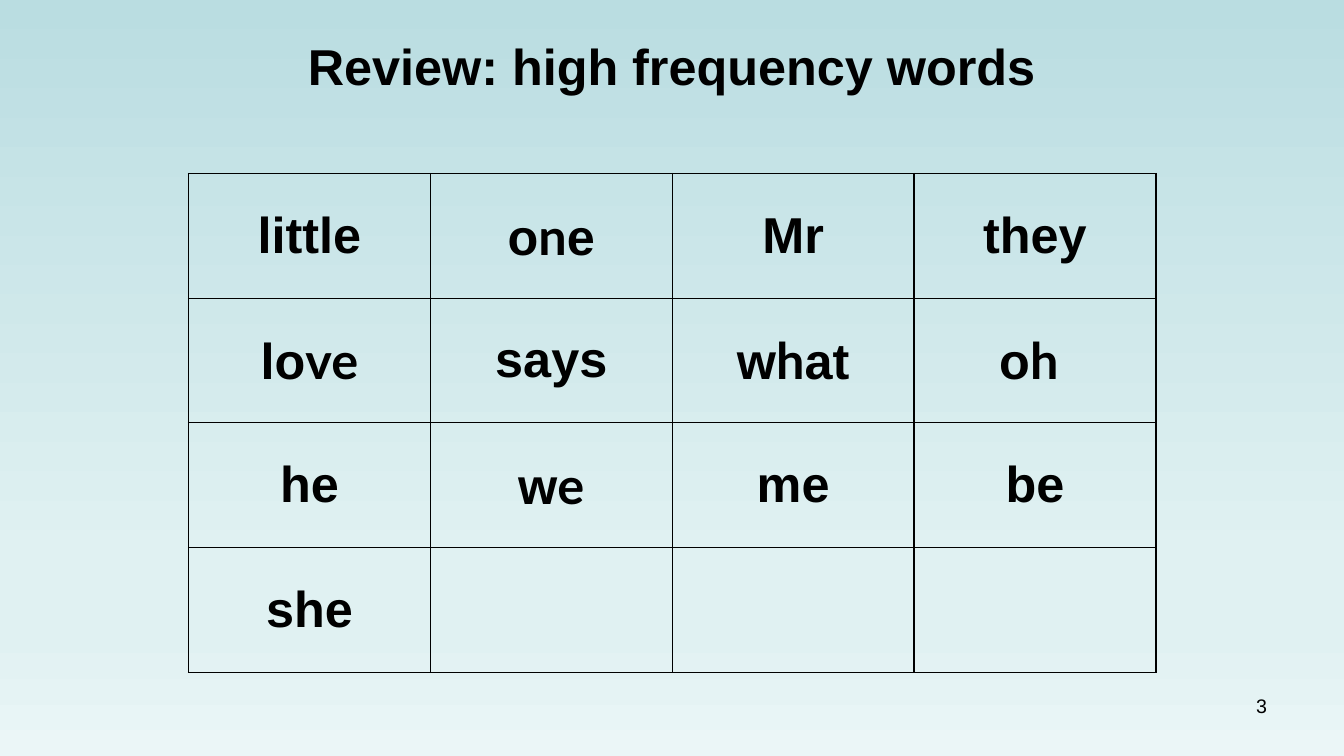
import copy

import pptx
import pptx.dml.color
import pptx.enum.text
import pptx.oxml
import pptx.oxml.ns
import pptx.util
from pptx.util import Cm

BLACK = pptx.dml.color.RGBColor(0x00, 0x00, 0x00)
SKY = pptx.dml.color.RGBColor(0xBA, 0xDD, 0xE1)
MIST = pptx.dml.color.RGBColor(0xE0, 0xF1, 0xF2)
PALE = pptx.dml.color.RGBColor(0xEB, 0xF6, 0xF7)
GRADIENT = [(0, SKY), (0.74, MIST), (0.83, MIST), (1, PALE)]

ALIGN = pptx.enum.text.PP_ALIGN
ANCHOR = pptx.enum.text.MSO_ANCHOR
FONTS = ("Arial", "Lato")

# A bar switches between the two fonts within a word
WORDS = [
    ["little", "o|n|e", "Mr", "they"],
    ["lo|ve", "says", "w|h|at", "o|h "],
    ["he", "w|e", "me", "be"],
    ["she", "", "", ""],
]


def format_run(r, size, bold=True, font="Arial"):
    r.font.size = pptx.util.Pt(size)
    r.font.bold = bold
    r.font.name = font
    r.font.color.rgb = BLACK


def set_background(s):
    fill = s.background.fill
    fill.gradient()
    fill.gradient_angle = 270
    stops = s.element.find(".//" + pptx.oxml.ns.qn("a:gsLst"))
    while len(stops) < len(GRADIENT):
        stops.append(copy.deepcopy(stops[0]))
    for stop, (position, color) in zip(fill.gradient_stops, GRADIENT):
        stop.position = position
        stop.color.rgb = color


def set_title(s, text):
    title = s.shapes.title
    title.left, title.top = Cm(1.69), Cm(0.76)
    title.width, title.height = Cm(30.48), Cm(3.18)
    tf = title.text_frame
    tf.text = text
    tf.vertical_anchor = ANCHOR.TOP
    p = tf.paragraphs[0]
    p.alignment = ALIGN.CENTER
    format_run(p.runs[0], 36)


def add_page_number(s, number):
    tf = s.shapes.add_textbox(Cm(24.28), Cm(17.35), Cm(7.9), Cm(1.32)).text_frame
    tf.word_wrap = True
    tf.text = number
    p = tf.paragraphs[0]
    p.alignment = ALIGN.RIGHT
    format_run(p.runs[0], 14, bold=False)


def set_borders(cell):
    tc_pr = cell._tc.get_or_add_tcPr()
    for i, side in enumerate(("lnL", "lnR", "lnT", "lnB")):
        line = pptx.oxml.parse_xml(
            f'<a:{side} {pptx.oxml.ns.nsdecls("a")} w="12700"><a:solidFill>'
            f'<a:srgbClr val="{BLACK}"/></a:solidFill></a:{side}>'
        )
        tc_pr.insert(i, line)


def fill_cell(cell, word):
    cell.fill.background()
    set_borders(cell)
    cell.vertical_anchor = ANCHOR.MIDDLE
    cell.margin_left = cell.margin_right = Cm(0.33)
    cell.margin_top = cell.margin_bottom = Cm(0.13)
    p = cell.text_frame.paragraphs[0]
    p.alignment = ALIGN.CENTER
    if word:
        for i, part in enumerate(word.split("|")):
            r = p.add_run()
            r.text = part
            format_run(r, 36, font=FONTS[i % 2])


def add_word_table(s):
    table = s.shapes.add_table(
        len(WORDS), len(WORDS[0]), Cm(4.75), Cm(4.37), Cm(24.38), Cm(12.57)
    ).table
    table.first_row = table.horz_banding = False
    for row, words in enumerate(WORDS):
        for col, word in enumerate(words):
            fill_cell(table.cell(row, col), word)


def main():
    prs = pptx.Presentation()
    prs.slide_width, prs.slide_height = Cm(33.87), Cm(19.05)
    s = prs.slides.add_slide(prs.slide_layouts[5])

    # Backdrop and heading
    set_background(s)
    set_title(s, "Review: high frequency words")

    # Word grid and page number
    add_word_table(s)
    add_page_number(s, "3")

    prs.save("out.pptx")


if __name__ == "__main__":
    main()
